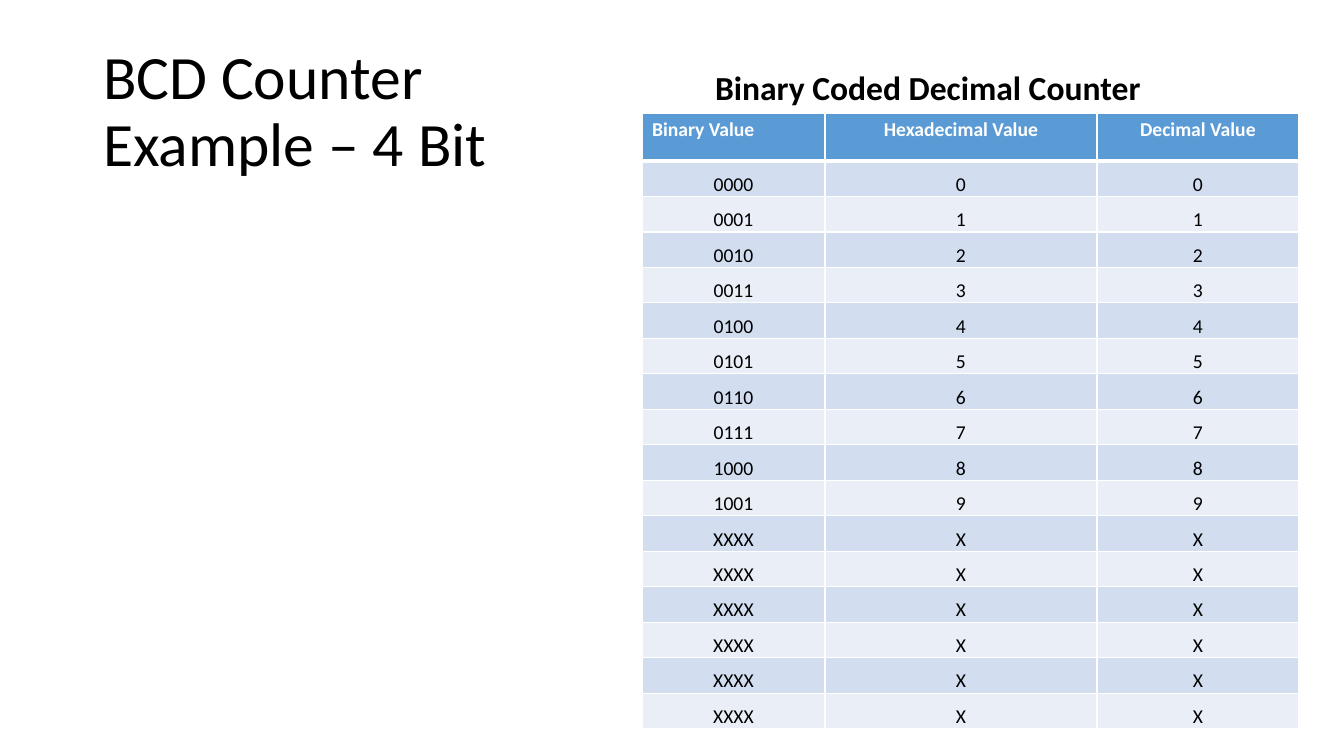
from lxml import etree
from pptx import Presentation
from pptx.dml.color import RGBColor
from pptx.enum.text import MSO_ANCHOR, MSO_AUTO_SIZE, PP_ALIGN
from pptx.oxml.ns import qn
from pptx.util import Pt

LEFT, CENTER = PP_ALIGN.LEFT, PP_ALIGN.CENTER
TOP, MIDDLE, BOTTOM = MSO_ANCHOR.TOP, MSO_ANCHOR.MIDDLE, MSO_ANCHOR.BOTTOM
NO_AUTOFIT = MSO_AUTO_SIZE.NONE

EMU_PER_PX = 914400 / 100.8
FONT = "Calibri"
COLORS = {
    "text": "000000",
    "white": "FFFFFF",
    "header": "5B9BD5",
    "odd_row": "D2DEEF",
    "even_row": "EAEFF7",
}


def px(length):
    return round(length * EMU_PER_PX)


def write(frame, text, size=14, color="text", bold=False, align=CENTER,
          line_spacing=None, space_before=None):
    paragraph = frame.paragraphs[0]
    paragraph.text = text
    paragraph.alignment = align
    if line_spacing is not None:
        paragraph.line_spacing = line_spacing
    if space_before is not None:
        paragraph.space_before = Pt(space_before)
    for run in paragraph.runs:
        run.font.name = FONT
        run.font.size = Pt(size)
        run.font.bold = bold
        run.font.color.rgb = RGBColor.from_string(COLORS[color])


presentation = Presentation()
presentation.slide_width, presentation.slide_height = px(1344), px(756)

# Comparison layout: keep the title and the first heading only
slide = presentation.slides.add_slide(presentation.slide_layouts[4])
for placeholder in list(slide.placeholders):
    if placeholder.placeholder_format.idx > 1:
        placeholder.element.getparent().remove(placeholder.element)

# Title and table heading
title, heading = slide.shapes.title, slide.placeholders[1]
for shape, box, anchor in (
    (title, (93, 40, 1159, 146), MIDDLE),
    (heading, (705, 22, 572, 91), BOTTOM),
):
    shape.left, shape.top, shape.width, shape.height = map(px, box)
    shape.text_frame.word_wrap = True
    shape.text_frame.auto_size = NO_AUTOFIT
    shape.text_frame.vertical_anchor = anchor
write(title.text_frame, "BCD Counter \nExample – 4 Bit", size=44, align=LEFT,
      line_spacing=0.9)
write(heading.text_frame, "Binary Coded Decimal Counter", size=24, bold=True,
      align=LEFT, line_spacing=0.9, space_before=10)

# Counter values: ten valid digits, then six unused codes
rows = [("Binary Value", "Hexadecimal Value", "Decimal Value")]
rows += [(f"{digit:04b}", str(digit), str(digit)) for digit in range(10)]
rows += [("XXXX", "X", "X")] * 6

# Table grid
column_widths = (183, 272, 202)
header_height, body_height = 48, 568
table = slide.shapes.add_table(
    len(rows), len(column_widths), px(642), px(113),
    px(sum(column_widths)), px(header_height + body_height)).table
table.horz_banding = False
for column, width in zip(table.columns, column_widths):
    column.width = px(width)
for row in table.rows:
    row.height = px(body_height / (len(rows) - 1))
table.rows[0].height = px(header_height)

# Table cells
for row_index, values in enumerate(rows):
    is_header = row_index == 0
    for column_index, value in enumerate(values):
        cell = table.cell(row_index, column_index)

        # White borders, thicker below the header
        thick_side = {0: "lnB", 1: "lnT"}.get(row_index)
        properties = cell._tc.get_or_add_tcPr()
        for side in ("lnL", "lnR", "lnT", "lnB"):
            width = Pt(3 if side == thick_side else 1)
            line = etree.SubElement(properties, qn(f"a:{side}"), w=str(width))
            fill = etree.SubElement(line, qn("a:solidFill"))
            etree.SubElement(fill, qn("a:srgbClr"), val=COLORS["white"])

        if is_header:
            fill_name = "header"
            cell.vertical_anchor = TOP
        else:
            fill_name = "odd_row" if row_index % 2 else "even_row"
            cell.vertical_anchor = BOTTOM
            cell.margin_left = cell.margin_right = cell.margin_top = px(1)
            cell.margin_bottom = 0
        cell.fill.solid()
        cell.fill.fore_color.rgb = RGBColor.from_string(COLORS[fill_name])
        write(cell.text_frame, value, bold=is_header,
              color="white" if is_header else "text",
              align=LEFT if is_header and column_index == 0 else CENTER)

presentation.save("out.pptx")
